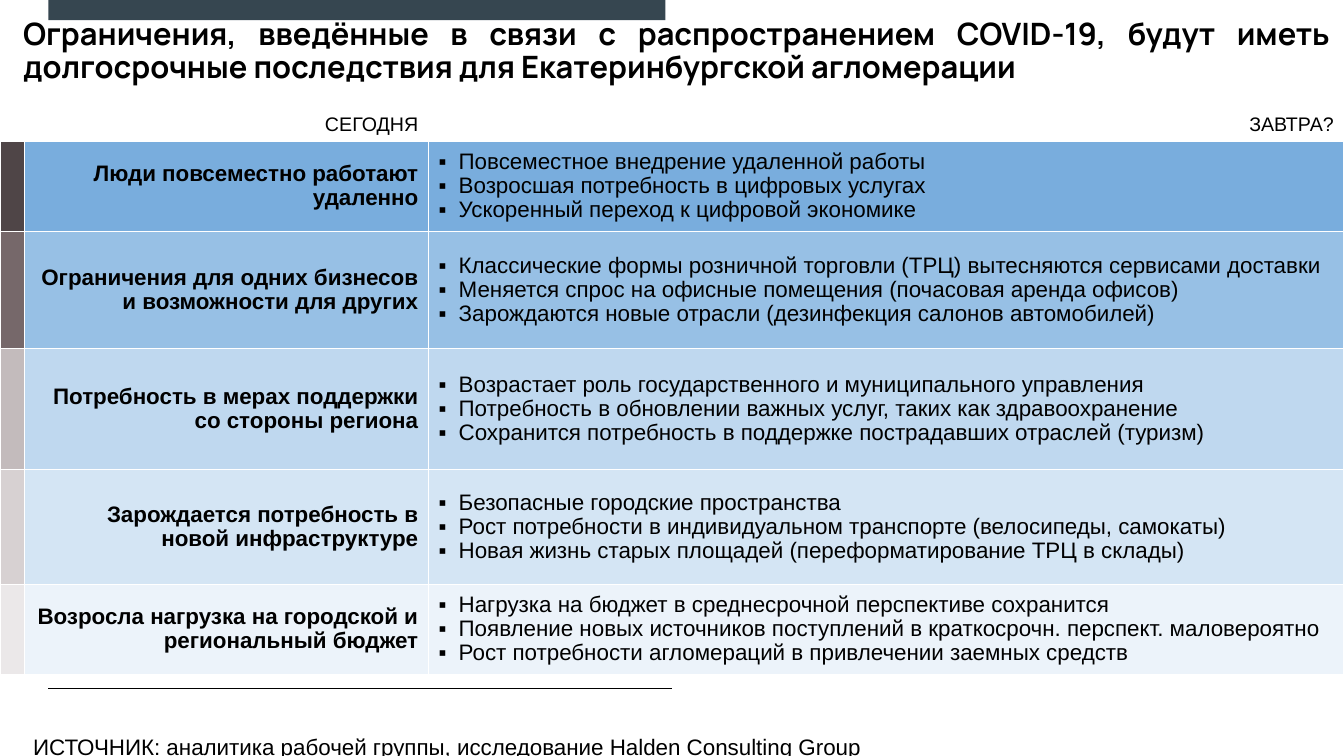
"""Slide on the lasting effects of COVID-19 restrictions on the Yekaterinburg agglomeration."""
import dataclasses

import lxml.etree
import pptx
import pptx.dml.color
import pptx.enum.shapes
import pptx.enum.text
import pptx.oxml.ns
import pptx.util

Inches = pptx.util.Inches
Pt = pptx.util.Pt
qn = pptx.oxml.ns.qn
ALIGN = pptx.enum.text.PP_ALIGN
ANCHOR = pptx.enum.text.MSO_ANCHOR


@dataclasses.dataclass(frozen=True)
class Theme:
    ink: str = "000000"
    paper: str = "FFFFFF"
    banner: str = "364650"
    markers: tuple = ("4F4547", "76686A", "C3BBBC", "D7D1D2", "EBE8E9")
    bands: tuple = ("79ADDD", "97C0E5", "BFD8EF", "D4E5F4", "ECF3FA")
    heading_font: str = "Manrope"
    text_font: str = "Arial"
    heading_size: int = 22
    text_size: int = 16
    header_size: int = 14


theme = Theme()


def rgb(code):
    return pptx.dml.color.RGBColor.from_string(code)


def add_run(paragraph, text, size, bold=False, font=theme.text_font):
    run = paragraph.add_run()
    run.text = text
    run.font.name = font
    run.font.size = Pt(size)
    run.font.bold = bold
    run.font.color.rgb = rgb(theme.ink)


topics = [
    ("Люди повсеместно работают удаленно", [
        "Повсеместное внедрение удаленной работы",
        "Возросшая потребность в цифровых услугах",
        "Ускоренный переход к цифровой экономике"]),
    ("Ограничения для одних бизнесов и возможности для других", [
        "Классические формы розничной торговли (ТРЦ) вытесняются сервисами доставки",
        "Меняется спрос на офисные помещения (почасовая аренда офисов)",
        "Зарождаются новые отрасли (дезинфекция салонов автомобилей)"]),
    ("Потребность в мерах поддержки со стороны региона", [
        "Возрастает роль государственного и муниципального управления",
        "Потребность в обновлении важных услуг, таких как здравоохранение",
        "Сохранится потребность в поддержке пострадавших отраслей (туризм)"]),
    ("Зарождается потребность в новой инфраструктуре", [
        "Безопасные городские пространства",
        "Рост потребности в индивидуальном транспорте (велосипеды, самокаты)",
        "Новая жизнь старых площадей (переформатирование ТРЦ в склады)"]),
    ("Возросла нагрузка на городской и региональный бюджет", [
        "Нагрузка на бюджет в среднесрочной перспективе сохранится",
        "Появление новых источников поступлений в краткосрочн. перспект. маловероятно",
        "Рост потребности агломераций в привлечении заемных средств"]),
]
column_widths = [0.24, 4.01, 9.08]
row_heights = [0.36, 0.9, 1.16, 1.2, 1.14, 0.89]

deck = pptx.Presentation()
deck.slide_width = Inches(13.33)
deck.slide_height = Inches(7.5)
slide = deck.slides.add_slide(deck.slide_layouts[5])

banner = slide.shapes.add_shape(
    pptx.enum.shapes.MSO_SHAPE.RECTANGLE, Inches(0.48), Inches(0), Inches(6.12), Inches(0.2))
banner.shadow.inherit = False
banner.fill.solid()
banner.fill.fore_color.rgb = rgb(theme.banner)
banner.line.fill.background()

footer_rule = slide.shapes.add_connector(
    pptx.enum.shapes.MSO_CONNECTOR.STRAIGHT, Inches(0.48), Inches(6.83), Inches(6.67), Inches(6.83))
footer_rule.line.color.rgb = rgb(theme.ink)
footer_rule.line.width = Pt(0.5)
lxml.etree.SubElement(footer_rule._element.spPr, qn("a:effectLst"))

heading = slide.shapes.title
heading.left, heading.top = Inches(0.23), Inches(0.19)
heading.width, heading.height = Inches(12.96), Inches(0.74)
heading_frame = heading.text_frame
heading_frame.margin_left = heading_frame.margin_right = 0
heading_frame.margin_top = heading_frame.margin_bottom = 0
heading_frame.auto_size = pptx.enum.text.MSO_AUTO_SIZE.NONE
heading_frame.vertical_anchor = ANCHOR.TOP
heading_line = heading_frame.paragraphs[0]
heading_line.alignment = ALIGN.JUSTIFY
heading_line.line_spacing = 0.89
add_run(heading_line,
        "Ограничения, введённые в связи с распространением COVID-19, будут иметь "
        "долгосрочные последствия для Екатеринбургской агломерации",
        theme.heading_size, True, theme.heading_font)

source = slide.shapes.add_textbox(Inches(0.23), Inches(7.22), Inches(12.22), Inches(0.37))
source.text_frame.word_wrap = True
add_run(source.text_frame.paragraphs[0],
        "ИСТОЧНИК: аналитика рабочей группы, исследование Halden Consulting Group", theme.text_size)

effects = slide.shapes.add_table(
    len(row_heights), len(column_widths), Inches(0), Inches(1.04),
    Inches(sum(column_widths)), Inches(sum(row_heights))).table
effects.first_row = effects.horz_banding = False
for column, width in zip(effects.columns, column_widths):
    column.width = Inches(width)
for row, height in zip(effects.rows, row_heights):
    row.height = Inches(height)

fills = [(theme.paper,) * 3] + [
    (marker, band, band) for marker, band in zip(theme.markers, theme.bands)]
for row_index, row_fills in enumerate(fills):
    for column_index, fill in enumerate(row_fills):
        cell = effects.cell(row_index, column_index)
        cell.vertical_anchor = ANCHOR.MIDDLE if row_index else ANCHOR.BOTTOM
        if column_index == 0:
            cell.margin_top = cell.margin_bottom = 0
        borders = cell._tc.get_or_add_tcPr()
        for side in ("a:lnL", "a:lnR", "a:lnT", "a:lnB"):
            border = lxml.etree.SubElement(borders, qn(side), w=str(Pt(1)))
            paint = lxml.etree.SubElement(border, qn("a:solidFill"))
            lxml.etree.SubElement(paint, qn("a:srgbClr"), val=theme.paper)
        cell.fill.solid()
        cell.fill.fore_color.rgb = rgb(fill)

for column_index, period in enumerate(("СЕГОДНЯ", "ЗАВТРА?"), start=1):
    period_line = effects.cell(0, column_index).text_frame.paragraphs[0]
    period_line.alignment = ALIGN.RIGHT
    add_run(period_line, period, theme.header_size)

for row_index, (today, outcomes) in enumerate(topics, start=1):
    today_line = effects.cell(row_index, 1).text_frame.paragraphs[0]
    today_line.alignment = ALIGN.RIGHT
    today_line.line_spacing = 0.97
    add_run(today_line, today, theme.text_size, True)

    tomorrow = effects.cell(row_index, 2).text_frame
    for outcome_index, outcome in enumerate(outcomes):
        outcome_line = tomorrow.add_paragraph() if outcome_index else tomorrow.paragraphs[0]
        properties = outcome_line._p.get_or_add_pPr()
        properties.set("marL", str(Inches(0.2)))
        properties.set("indent", str(Inches(-0.2)))
        lxml.etree.SubElement(properties, qn("a:buFont"), typeface=theme.text_font)
        lxml.etree.SubElement(properties, qn("a:buChar"), char="▪")
        outcome_line.alignment = ALIGN.JUSTIFY
        outcome_line.line_spacing = 0.97
        add_run(outcome_line, outcome, theme.text_size)

deck.save("out.pptx")
